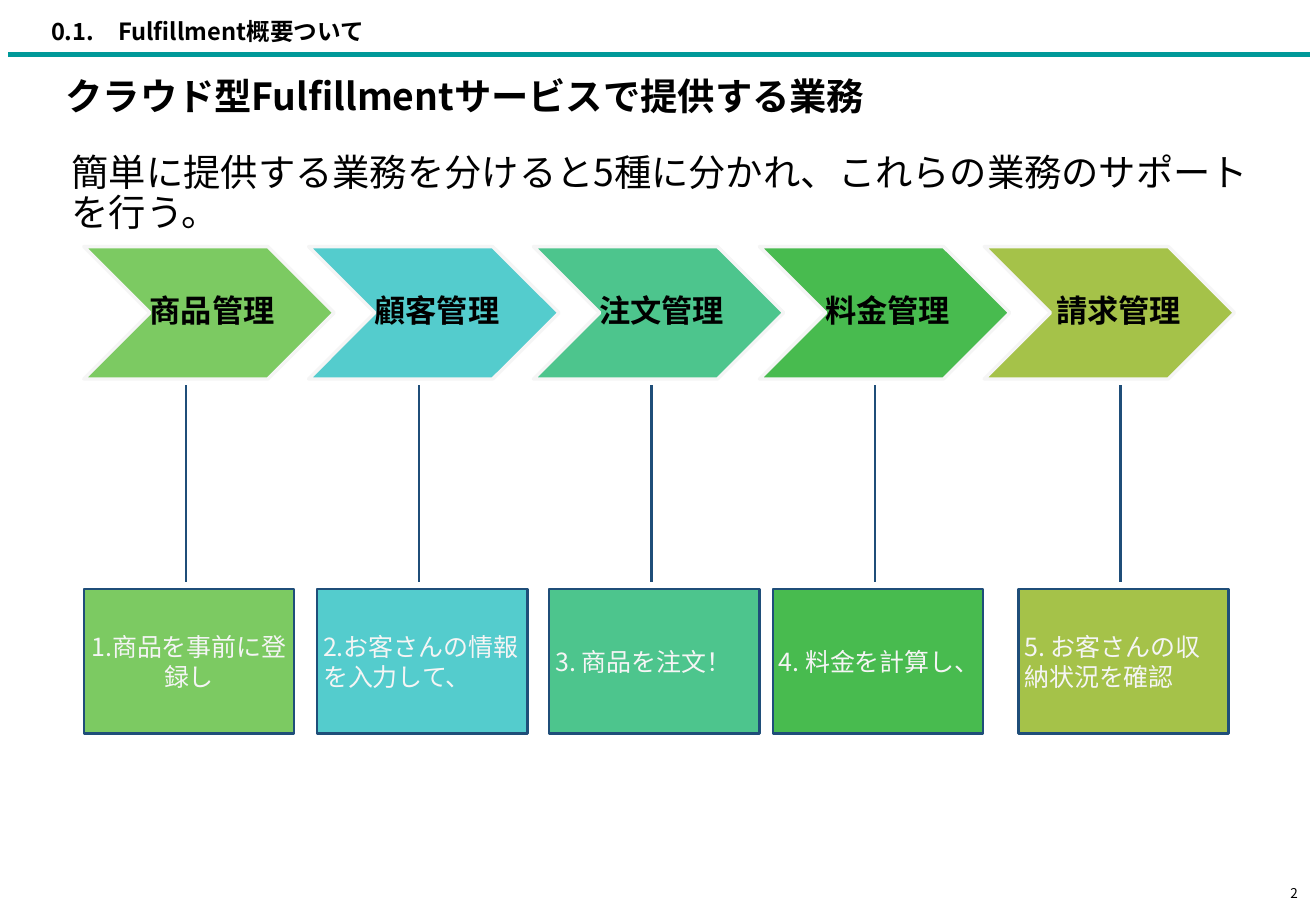
from lxml.etree import SubElement
from pptx import Presentation
from pptx.dml.color import RGBColor
from pptx.enum.shapes import MSO_CONNECTOR as Connector, MSO_SHAPE as Shape
from pptx.enum.text import MSO_ANCHOR as Anchor, MSO_AUTO_SIZE as AutoSize, PP_ALIGN as Align
from pptx.oxml.ns import qn
from pptx.util import Pt

PX = 9144
FONT = "Noto Sans CJK JP"
COLORS = {
    "rule": "009999", "text": "000000", "light": "F5F5F5", "outline": "1F4E79",
    "product": "7CCA62", "customer": "54CCCD", "order": "4DC58D",
    "charge": "48BB4F", "billing": "A5C249",
}
STEPS = [
    ("product", "商品管理", "1.商品を事前に登録し", 69, 46, Align.CENTER),
    ("customer", "顧客管理", "2.お客さんの情報を入力して、", 261, 46, Align.LEFT),
    ("order", "注文管理", "3. 商品を注文！", 452, 46, Align.LEFT),
    ("charge", "料金管理", "4. 料金を計算し、", 636, 46, Align.LEFT),
    ("billing", "請求管理", "5. お客さんの収納状況を確認", 838, 51, Align.LEFT),
]


def px(*lengths):
    """Turn px lengths into EMU."""
    return [length * PX for length in lengths]


def color(name):
    """Look up a named colour."""
    return RGBColor.from_string(COLORS[name])


def write(shape, text, size, ink="text", bold=False, align=Align.LEFT, anchor=Anchor.MIDDLE,
          insets=(5, 5, 5, 5), spacing=None, before=None, wrap=True, fit=AutoSize.NONE):
    """Fill a shape with one formatted paragraph."""
    frame = shape.text_frame
    frame.text = text
    frame.word_wrap = wrap
    frame.auto_size = fit
    frame.vertical_anchor = anchor
    frame.margin_left, frame.margin_top, frame.margin_right, frame.margin_bottom = px(*insets)
    paragraph = frame.paragraphs[0]
    paragraph.alignment = align
    paragraph.line_spacing = spacing
    if before is not None:
        paragraph.space_before = Pt(before)
    font = paragraph.runs[0].font
    font.size, font.bold, font.name = Pt(size), bold, FONT
    font.color.rgb = color(ink)
    latin = font._element.find(qn("a:latin"))
    east_asian = SubElement(font._element, qn("a:ea"), typeface=FONT)
    latin.addnext(east_asian)


def add_text(slide, box, text, size, **style):
    """Place a text box."""
    write(slide.shapes.add_textbox(*px(*box)), text, size, **style)


def add_filled(slide, kind, box, fill, line, width):
    """Place a filled, outlined preset shape."""
    shape = slide.shapes.add_shape(kind, *px(*box))
    shape.shadow.inherit = False
    shape.fill.solid()
    shape.fill.fore_color.rgb = color(fill)
    shape.line.color.rgb = color(line)
    shape.line.width = Pt(width)
    return shape


def add_line(slide, points, name, width):
    """Draw a straight line without shadow."""
    line = slide.shapes.add_connector(Connector.STRAIGHT, *px(*points))
    line.line.color.rgb = color(name)
    line.line.width = Pt(width)
    SubElement(line._element.spPr, qn("a:effectLst"))


def add_header(slide, left, top, width, height):
    """Set the title above its rule."""
    add_line(slide, (left, top + 45, left + width, top + 45), "rule", 3)
    title = slide.shapes.title
    title.left, title.top, title.width, title.height = px(left + 27, top + 7, width - 56, height)
    write(title, "0.1.\u3000Fulfillment概要ついて".replace("\u3000", "　"), 14, bold=True,
          insets=(8, 4, 4, 4))


def add_introduction(slide, left, top, width, height):
    """Place the heading and the lead sentence."""
    add_text(slide, (left, top, 800, 44), "クラウド型Fulfillmentサービスで提供する業務", 22.1,
             bold=True, anchor=Anchor.BOTTOM, insets=(0, 2, 0, 8), spacing=1.1)
    add_text(slide, (left, top + 61, width, height - 61),
             "簡単に提供する業務を分けると5種に分かれ、これらの業務のサポートを行う。", 22.1,
             anchor=Anchor.TOP, spacing=0.9, before=9.2)


def add_process(slide, left, top, width, height):
    """Place the chevrons with a line down to each task box."""
    chevron_width, box_width, box_height = 206, 173, 119
    pitch = (width - chevron_width) / (len(STEPS) - 1)
    box_top = top + height - box_height
    for index, (fill, name, task, box_left, label_offset, align) in enumerate(STEPS):
        chevron_left = left + round(index * pitch)
        add_filled(slide, Shape.CHEVRON, (chevron_left, top, chevron_width, 109), fill, "light", 2)
        add_text(slide, (chevron_left + label_offset, top + 38, 119, 33), name, 18.5, bold=True,
                 align=Align.CENTER, insets=(3, 3, 3, 3), spacing=0.9, before=8,
                 fit=AutoSize.SHAPE_TO_FIT_TEXT)
        box = add_filled(slide, Shape.RECTANGLE, (box_left, box_top, box_width, box_height),
                         fill, "outline", 1.5)
        write(box, task, 14.8, ink="light", align=align)
        line_x = box_left + 84
        add_line(slide, (line_x, box_top - 6, line_x, top + 114), "outline", 1.5)


def add_page_number(slide, left, top, width, height):
    """Place the page number."""
    add_text(slide, (left, top, width, height), "2", 8, align=Align.RIGHT,
             insets=(10, 5, 10, 5), wrap=False)


def main():
    """Build and save the slide."""
    presentation = Presentation()
    presentation.slide_width, presentation.slide_height = px(1083, 750)
    slide = presentation.slides.add_slide(presentation.slide_layouts[5])
    add_header(slide, 7, 0, 1071, 37)
    add_introduction(slide, 54, 61, 981, 679)
    add_process(slide, 69, 203, 947, 401)
    add_page_number(slide, 1041, 725, 37, 20)
    presentation.save("out.pptx")


if __name__ == "__main__":
    main()
